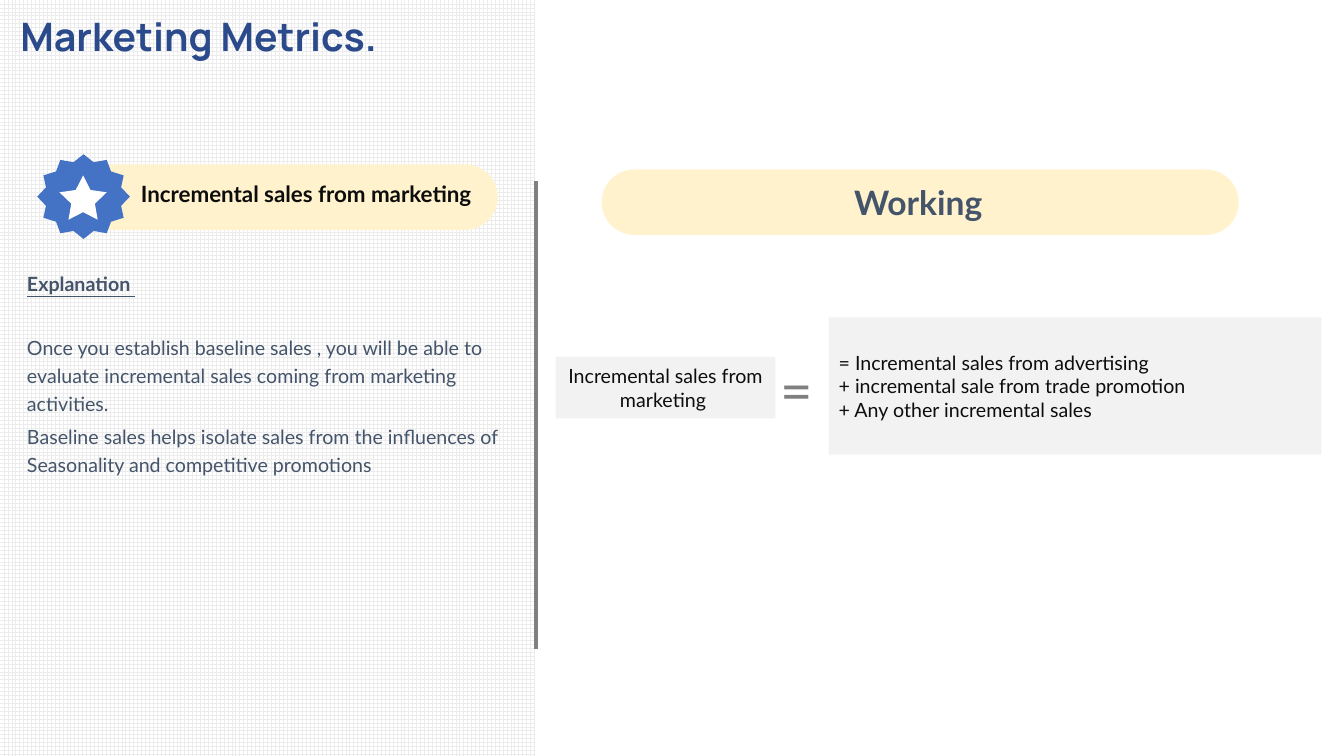
from lxml import etree
from pptx import Presentation
from pptx.dml.color import RGBColor
from pptx.enum.dml import MSO_PATTERN
from pptx.enum.shapes import MSO_CONNECTOR, MSO_SHAPE
from pptx.enum.text import MSO_ANCHOR, PP_ALIGN
from pptx.oxml.ns import qn
from pptx.util import Pt

RECTANGLE = MSO_SHAPE.RECTANGLE
PILL = MSO_SHAPE.ROUNDED_RECTANGLE
BADGE = MSO_SHAPE.STAR_12_POINT
STAR = MSO_SHAPE.STAR_5_POINT
STRAIGHT = MSO_CONNECTOR.STRAIGHT
GRID = MSO_PATTERN.LARGE_GRID
TOP, MIDDLE, BOTTOM = MSO_ANCHOR.TOP, MSO_ANCHOR.MIDDLE, MSO_ANCHOR.BOTTOM
LEFT, CENTER = PP_ALIGN.LEFT, PP_ALIGN.CENTER

COLORS = {
    "title": "2A4A8B",
    "slate": "44546A",
    "ink": "0D0D0D",
    "gray": "808080",
    "box": "F2F2F2",
    "cream": "FFF2CC",
    "blue": "4472C4",
    "white": "FFFFFF",
    "grid": "ECECEC",
}


def color(name):
    return RGBColor.from_string(COLORS[name])


class SlideBuilder:
    font_name = "Lato"

    def __init__(self, slide):
        self.slide = slide

    def fill_text(self, shape, lines, ink, size, align=LEFT, anchor=MIDDLE, formats=None, **font):
        frame = shape.text_frame
        frame.word_wrap = True
        frame.vertical_anchor = anchor
        font_values = {"name": self.font_name, "size": Pt(size), **font}
        for index, line in enumerate(lines):
            paragraph = frame.paragraphs[0] if index == 0 else frame.add_paragraph()
            paragraph.alignment = align
            for name, value in (formats[index] if formats else {}).items():
                setattr(paragraph, name, value)
            run = paragraph.add_run()
            run.text = line
            for name, value in font_values.items():
                setattr(run.font, name, value)
            run.font.color.rgb = color(ink)

    def shape(self, kind, bounds, fill, adjustment=None):
        shape = self.slide.shapes.add_shape(kind, *map(Pt, bounds))
        shape.shadow.inherit = False
        shape.fill.solid()
        shape.fill.fore_color.rgb = color(fill)
        shape.line.fill.background()
        if adjustment is not None:
            shape.adjustments[0] = adjustment
        return shape

    def panel(self, bounds):
        fill = self.shape(RECTANGLE, bounds, "white").fill
        fill.patterned()
        fill.pattern = GRID
        fill.fore_color.rgb = color("grid")
        fill.back_color.rgb = color("white")

    def text(self, bounds, lines, ink, size, **options):
        box = self.slide.shapes.add_textbox(*map(Pt, bounds))
        self.fill_text(box, lines, ink, size, **options)
        return box

    def box(self, bounds, lines, ink="ink", size=14, fill="box", align=CENTER):
        self.fill_text(self.shape(RECTANGLE, bounds, fill), lines, ink, size, align=align)

    def line(self, start, end, ink, width):
        connector = self.slide.shapes.add_connector(STRAIGHT, *map(Pt, start + end))
        connector.line.color.rgb = color(ink)
        connector.line.width = Pt(width)
        etree.SubElement(connector._element.spPr, qn("a:effectLst"))


def main():
    presentation = Presentation()
    presentation.slide_width = Pt(960)
    presentation.slide_height = Pt(540)
    builder = SlideBuilder(presentation.slides.add_slide(presentation.slide_layouts[6]))

    builder.panel((0, 0, 382.3, 540))
    builder.text((7.5, 5, 304, 41), ["Marketing Metrics."], "title", 28,
                 anchor=TOP, name="Manrope", bold=True)

    body = {"line_spacing": 1.2, "space_before": Pt(3.4)}
    explanation = builder.text(
        (12.2, 187, 370, 160),
        [
            "Explanation ",
            "Once you establish baseline sales , you will be able to evaluate "
            "incremental sales coming from marketing activities.",
            "Baseline sales helps isolate sales from the influences of "
            "Seasonality and competitive promotions",
        ],
        "slate", 14, anchor=TOP,
        formats=[{"line_spacing": 1.2}, {**body, "space_before": Pt(25.6)}, body],
    )
    heading = explanation.text_frame.paragraphs[0].runs[0]
    for name in ("bold", "underline"):
        setattr(heading.font, name, True)

    builder.shape(PILL, (429.8, 121, 455, 46.8), "cream", 0.5)
    builder.text((449.3, 126, 419, 36), ["Working "], "slate", 24,
                 align=CENTER, anchor=BOTTOM, bold=True)

    builder.line((383, 129.6), (383, 463.7), "gray", 3)

    builder.shape(PILL, (37.4, 117.4, 318.2, 46.8), "cream", 0.5)
    builder.shape(BADGE, (26.6, 110.2, 66.2, 60.5), "blue", 0.42)
    builder.shape(STAR, (42.5, 125.3, 33.8, 31.7), "white", 0.25)
    builder.text((92.9, 125.3, 255.6, 26.6), ["Incremental sales from marketing "],
                 "ink", 16, align=CENTER, bold=True)

    builder.box((545.8, 265, 46.8, 25.2), ["="], "gray", 40, "white")
    builder.box((396.9, 254.9, 157, 43.9), ["Incremental sales from marketing "])
    builder.box(
        (592, 226.8, 352, 97.9),
        [
            "= Incremental sales from advertising",
            "+ incremental sale from trade promotion",
            "+ Any other incremental sales",
        ],
        align=LEFT,
    )
    presentation.save("out.pptx")


if __name__ == "__main__":
    main()
